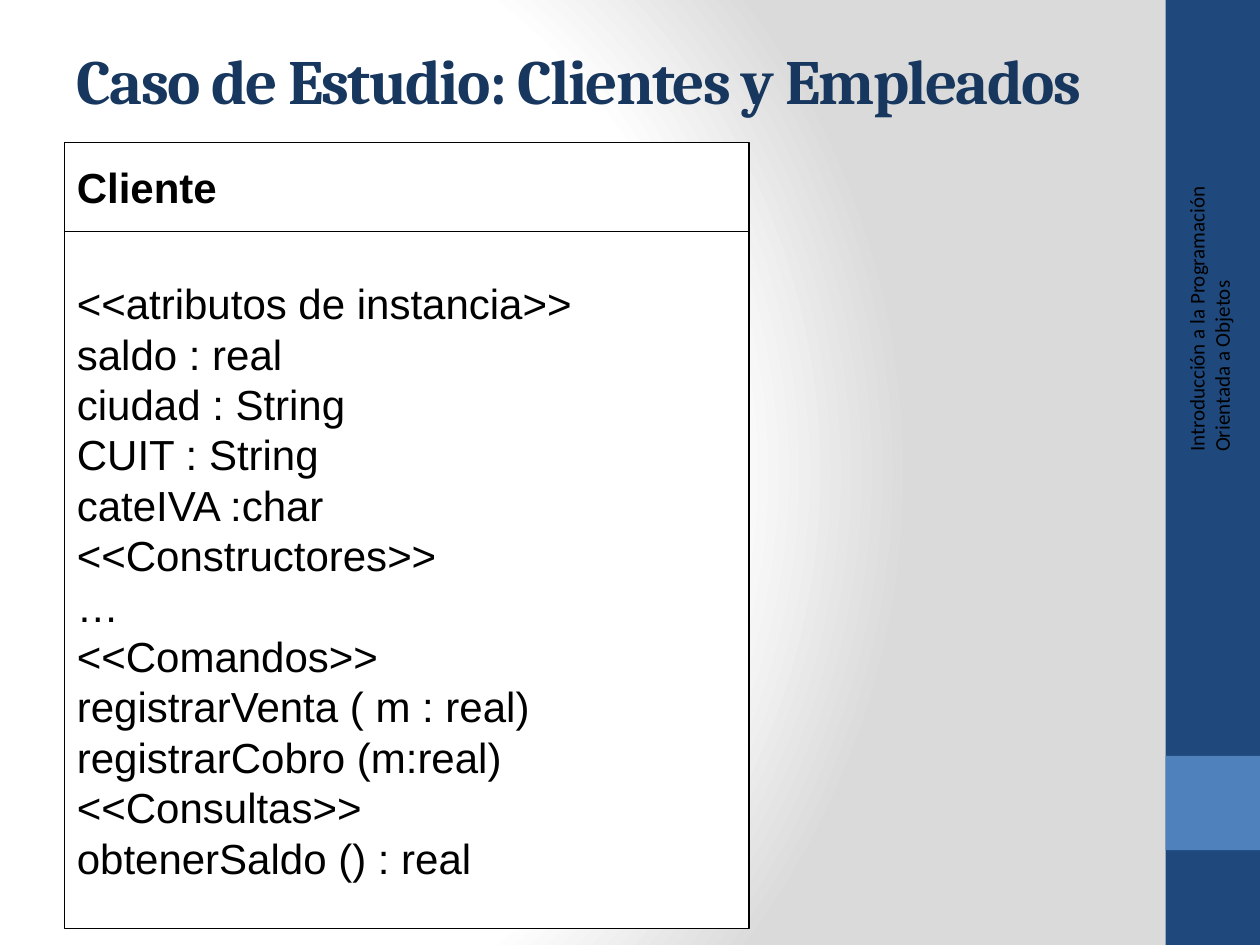
from dataclasses import dataclass

import pptx
import pptx.dml.color
import pptx.enum.shapes
import pptx.enum.text
import pptx.oxml
import pptx.oxml.ns
import pptx.util
from pptx.util import Cm


@dataclass(frozen=True)
class Theme:
    navy: str = "1F497D"
    blue: str = "4F81BD"
    title: str = "17375E"
    ink: str = "000000"
    white: str = "FFFFFF"
    gray: str = "DADADA"
    title_size: float = 36
    class_size: float = 24
    side_size: float = 12
    class_leading: float = 28.8


theme = Theme()


def add_rectangle(left, top, width, height, fill, line=None):
    box = page.shapes.add_shape(pptx.enum.shapes.MSO_SHAPE.RECTANGLE,
                                Cm(left), Cm(top), Cm(width), Cm(height))
    box.shadow.inherit = False
    box.fill.solid()
    box.fill.fore_color.rgb = pptx.dml.color.RGBColor.from_string(fill)
    if line:
        box.line.color.rgb = pptx.dml.color.RGBColor.from_string(line)
        box.line.width = pptx.util.Pt(0.75)
    else:
        box.line.fill.background()
    return box


def write(box, text, font, size, color, bold=False):
    """Put left-aligned, vertically centred text in a box."""
    frame = box.text_frame
    frame.word_wrap = True
    frame.vertical_anchor = pptx.enum.text.MSO_ANCHOR.MIDDLE
    frame.text = text
    for para in frame.paragraphs:
        para.alignment = pptx.enum.text.PP_ALIGN.LEFT
        for span in para.runs:
            span.font.name = font
            span.font.size = pptx.util.Pt(size)
            span.font.bold = bold
            span.font.color.rgb = pptx.dml.color.RGBColor.from_string(color)


deck = pptx.Presentation()
deck.slide_width, deck.slide_height = Cm(25.4), Cm(19.05)
page = deck.slides.add_slide(deck.slide_layouts[6])

# Background: radial gradient, white on the left and gray on the right
page.background.fill.gradient()
gradient = page.element.find(".//" + pptx.oxml.ns.qn("a:gradFill"))
stops = "".join(
    f'<a:gs pos="{position * 1000}"><a:srgbClr val="{color}"/></a:gs>'
    for position, color in ((0, theme.white), (75, theme.white), (100, theme.gray)))
gradient.getparent().replace(gradient, pptx.oxml.parse_xml(
    f'<a:gradFill {pptx.oxml.ns.nsdecls("a")} rotWithShape="1">'
    f'<a:gsLst>{stops}</a:gsLst><a:path path="circle">'
    '<a:fillToRect l="20000" t="50000" r="100000" b="50000"/>'
    '</a:path></a:gradFill>'))

# Side band with the course name
add_rectangle(23.5, 0, 1.9, 19.05, theme.navy)
add_rectangle(23.5, 15.24, 1.9, 1.9, theme.blue)
course = page.shapes.add_textbox(Cm(20.98), Cm(5.46), Cm(6.78), Cm(1.02))
course.rotation = 270
write(course, "Introducción a la Programación Orientada a Objetos",
      "Calibri", theme.side_size, theme.ink)

# Class diagram
class_name = add_rectangle(1.3, 2.87, 13.8, 1.8, theme.white, theme.ink)
write(class_name, "Cliente", "Arial", theme.class_size, theme.ink, bold=True)

members = [
    "<<atributos de instancia>>",
    "saldo : real",
    "ciudad : String",
    "CUIT : String",
    "cateIVA :char",
    "<<Constructores>>",
    "…",
    "<<Comandos>>",
    "registrarVenta ( m : real)",
    "registrarCobro (m:real)",
    "<<Consultas>>",
    "obtenerSaldo () : real",
]
class_body = add_rectangle(1.3, 4.67, 13.8, 14.05, theme.white, theme.ink)
write(class_body, "\n".join(members), "Arial", theme.class_size, theme.ink)
for para in class_body.text_frame.paragraphs:
    para.line_spacing = pptx.util.Pt(theme.class_leading)

# Title
title = page.shapes.add_textbox(Cm(1.3), Cm(0), Cm(22.02), Cm(3.18))
write(title, "Caso de Estudio: Clientes y Empleados",
      "Cambria", theme.title_size, theme.title, bold=True)
for span in title.text_frame.paragraphs[0].runs:
    span.font._element.set("spc", "-100")

deck.save("out.pptx")
